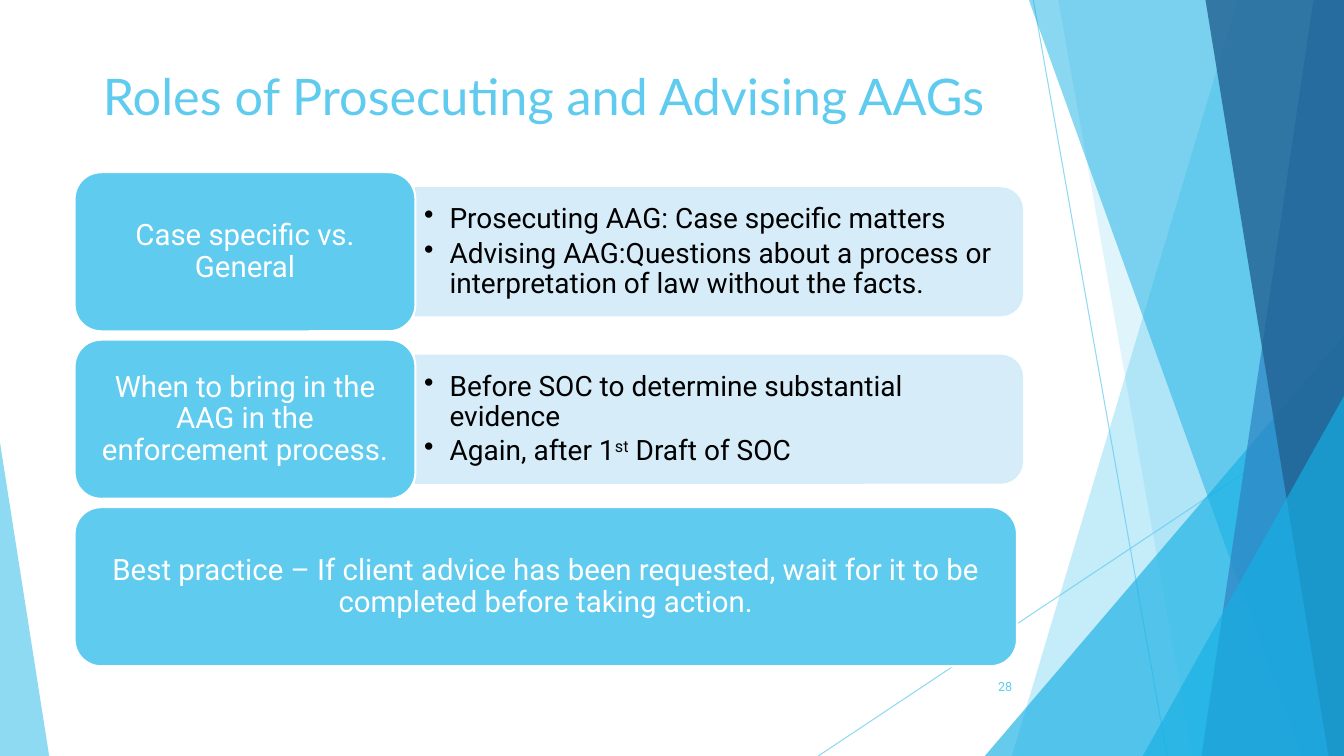
from lxml.etree import SubElement
from pptx import Presentation
from pptx.dml.color import RGBColor
from pptx.enum.shapes import MSO_CONNECTOR, MSO_SHAPE
from pptx.enum.text import MSO_ANCHOR as ANCHOR, MSO_AUTO_SIZE as AUTO_SIZE, PP_ALIGN as ALIGN
from pptx.oxml.ns import qn
from pptx.util import Cm, Pt

COLORS = {
    "sky": "5FCBEF", "cyan": "17B0E4", "blue": "2E83C3", "navy": "226292",
    "pale": "D2ECF9", "white": "FFFFFF", "black": "000000",
}
WIDTH, HEIGHT = 33.87, 19.05
ROW_TOP, ROW_PITCH, ROW_HEIGHT = 4.34, 4.22, 4.01
LABEL_LEFT, LABEL_WIDTH, BANNER_WIDTH = 1.88, 8.59, 23.75
ROWS = [
    ("Case specific vs. General", [
        ["Prosecuting AAG: Case specific matters"],
        ["Advising AAG:Questions about a process or interpretation of law without the facts."],
    ]),
    ("When to bring in the AAG in the enforcement process.", [
        ["Before SOC to determine substantial evidence"],
        ["Again, after 1", "st", " Draft of SOC"],
    ]),
]
BEST_PRACTICE = ("Best practice – If client advice has been requested, "
                 "wait for it to be completed before taking action.")


def rgb(name):
    """Return the named colour."""
    return RGBColor.from_string(COLORS[name])


def set_opacity(shape, percent):
    """Apply one opacity to the fill and line of a shape."""
    for color in shape._element.spPr.iter(qn("a:srgbClr")):
        SubElement(color, qn("a:alpha"), val=str(percent * 1000))


def paint(shape, fill, line=None, opacity=100):
    """Give a shape its fill, outline and opacity, without a shadow."""
    shape.shadow.inherit = False
    shape.fill.solid()
    shape.fill.fore_color.rgb = rgb(fill)
    if line:
        shape.line.color.rgb = rgb(line)
        shape.line.width = Pt(1.5)
    else:
        shape.line.fill.background()
    if opacity < 100:
        set_opacity(shape, opacity)


def format_runs(paragraph, size, color, font="Roboto"):
    """Set the font of every run in a paragraph."""
    for run in paragraph.runs:
        run.font.size = Pt(size)
        run.font.name = font
        run.font.color.rgb = rgb(color)


def set_frame(text_frame, anchor, side, edge):
    """Set wrapping, anchor and insets of a text frame."""
    text_frame.word_wrap = True
    text_frame.auto_size = AUTO_SIZE.NONE
    text_frame.vertical_anchor = anchor
    text_frame.margin_left = text_frame.margin_right = Cm(side)
    text_frame.margin_top = text_frame.margin_bottom = Cm(edge)


def add_ray(slide, x1, y1, x2, y2):
    """Add a thin decorative line."""
    ray = slide.shapes.add_connector(MSO_CONNECTOR.STRAIGHT, Cm(x1), Cm(y1), Cm(x2), Cm(y2))
    ray.line.color.rgb = rgb("sky")
    ray.line.width = Pt(0.75)
    set_opacity(ray, 70)
    SubElement(ray._element.spPr, qn("a:effectLst"))


def add_band(slide, top_x, bottom_x, color, opacity):
    """Add a full-height band from a slanted edge to the right slide edge."""
    builder = slide.shapes.build_freeform(Cm(top_x), 0)
    corners = [(WIDTH, 0), (WIDTH, HEIGHT), (bottom_x, HEIGHT)]
    builder.add_line_segments([(Cm(x), Cm(y)) for x, y in corners], close=True)
    paint(builder.convert_to_shape(), color, opacity=opacity)


def add_wedge(slide, left, top, width, tip, color, opacity):
    """Add a right triangle that stands on the bottom edge."""
    wedge = slide.shapes.add_shape(
        MSO_SHAPE.ISOSCELES_TRIANGLE, Cm(left), Cm(top), Cm(width), Cm(HEIGHT - top))
    wedge.adjustments[0] = tip
    paint(wedge, color, opacity=opacity)


def add_decoration(slide):
    """Add the faceted background from back to front."""
    add_ray(slide, 26.04, 0, 29.41, HEIGHT)
    add_ray(slide, WIDTH, 10.24, 20.62, HEIGHT)
    add_band(slide, 31.19, 25.5, "sky", 36)
    add_band(slide, 26.67, 30.05, "sky", 20)
    add_wedge(slide, 24.82, 8.46, 9.05, 1, "cyan", 66)
    add_band(slide, 25.93, 32.79, "cyan", 50)
    add_band(slide, 33.1, 30.28, "blue", 70)
    add_band(slide, 30.38, 33.48, "navy", 80)
    add_wedge(slide, 28.8, 9.98, 5.07, 1, "cyan", 66)
    add_wedge(slide, 0, 11.15, 1.24, 0, "sky", 70)


def add_title(slide, text):
    """Place and format the title in front of the background."""
    title = slide.shapes.title
    title.left, title.top, title.width, title.height = Cm(2.34), Cm(1.4), Cm(29.21), Cm(2.64)
    slide.shapes._spTree.append(title._element)
    set_frame(title.text_frame, ANCHOR.TOP, 0.25, 0.13)
    title.text_frame.text = text
    paragraph = title.text_frame.paragraphs[0]
    paragraph.alignment = ALIGN.LEFT
    paragraph.line_spacing = 1.07
    format_runs(paragraph, 36, "sky", "Lato")


def add_label(slide, top, width, text):
    """Add a rounded box with centred white text."""
    label = slide.shapes.add_shape(
        MSO_SHAPE.ROUNDED_RECTANGLE, Cm(LABEL_LEFT), Cm(top), Cm(width), Cm(ROW_HEIGHT))
    paint(label, "sky", "white")
    set_frame(label.text_frame, ANCHOR.MIDDLE, 0.22, 0.11)
    label.text_frame.text = text
    paragraph = label.text_frame.paragraphs[0]
    paragraph.alignment = ALIGN.CENTER
    paragraph.line_spacing = 0.9
    format_runs(paragraph, 21, "white")


def add_bullet(paragraph, pieces):
    """Fill a bulleted paragraph; every second piece is superscript."""
    for index, piece in enumerate(pieces):
        run = paragraph.add_run()
        run.text = piece
        if index % 2:
            run.font._element.set("baseline", "30000")
    format_runs(paragraph, 20, "black")
    paragraph.line_spacing = 0.9
    paragraph.space_after = Pt(3)
    properties = paragraph._element.get_or_add_pPr()
    properties.set("marL", str(Cm(0.64)))
    properties.set("indent", str(-Cm(0.64)))
    SubElement(properties, qn("a:buChar"), char="•")


def add_details(slide, top, bullets):
    """Add a pale bar with its bulleted text."""
    bar = slide.shapes.add_shape(
        MSO_SHAPE.ROUND_2_SAME_RECTANGLE, Cm(16.51), Cm(top - 5.64), Cm(3.2), Cm(15.29))
    bar.rotation = 90
    paint(bar, "pale", "pale", 90)
    box = slide.shapes.add_textbox(Cm(10.49), Cm(top + 0.56), Cm(15.14), Cm(2.9))
    text_frame = box.text_frame
    set_frame(text_frame, ANCHOR.MIDDLE, 0.2, 0.1)
    for index, pieces in enumerate(bullets):
        add_bullet(text_frame.add_paragraph() if index else text_frame.paragraphs[0], pieces)


def add_page_number(slide, number):
    """Add the slide number at the lower right."""
    box = slide.shapes.add_textbox(Cm(23.85), Cm(16.79), Cm(1.91), Cm(1.02))
    set_frame(box.text_frame, ANCHOR.MIDDLE, 0.25, 0.13)
    box.text_frame.text = number
    paragraph = box.text_frame.paragraphs[0]
    paragraph.alignment = ALIGN.RIGHT
    format_runs(paragraph, 9, "sky")


def main():
    """Build and save the slide."""
    presentation = Presentation()
    presentation.slide_width, presentation.slide_height = Cm(WIDTH), Cm(HEIGHT)
    slide = presentation.slides.add_slide(presentation.slide_layouts.get_by_name("Title Only"))
    add_decoration(slide)
    add_title(slide, "Roles of Prosecuting and Advising AAGs")
    for index, (label, bullets) in enumerate(ROWS):
        top = ROW_TOP + index * ROW_PITCH
        add_details(slide, top, bullets)
        add_label(slide, top, LABEL_WIDTH, label)
    add_label(slide, ROW_TOP + len(ROWS) * ROW_PITCH, BANNER_WIDTH, BEST_PRACTICE)
    add_page_number(slide, "28")
    presentation.save("out.pptx")


if __name__ == "__main__":
    main()
